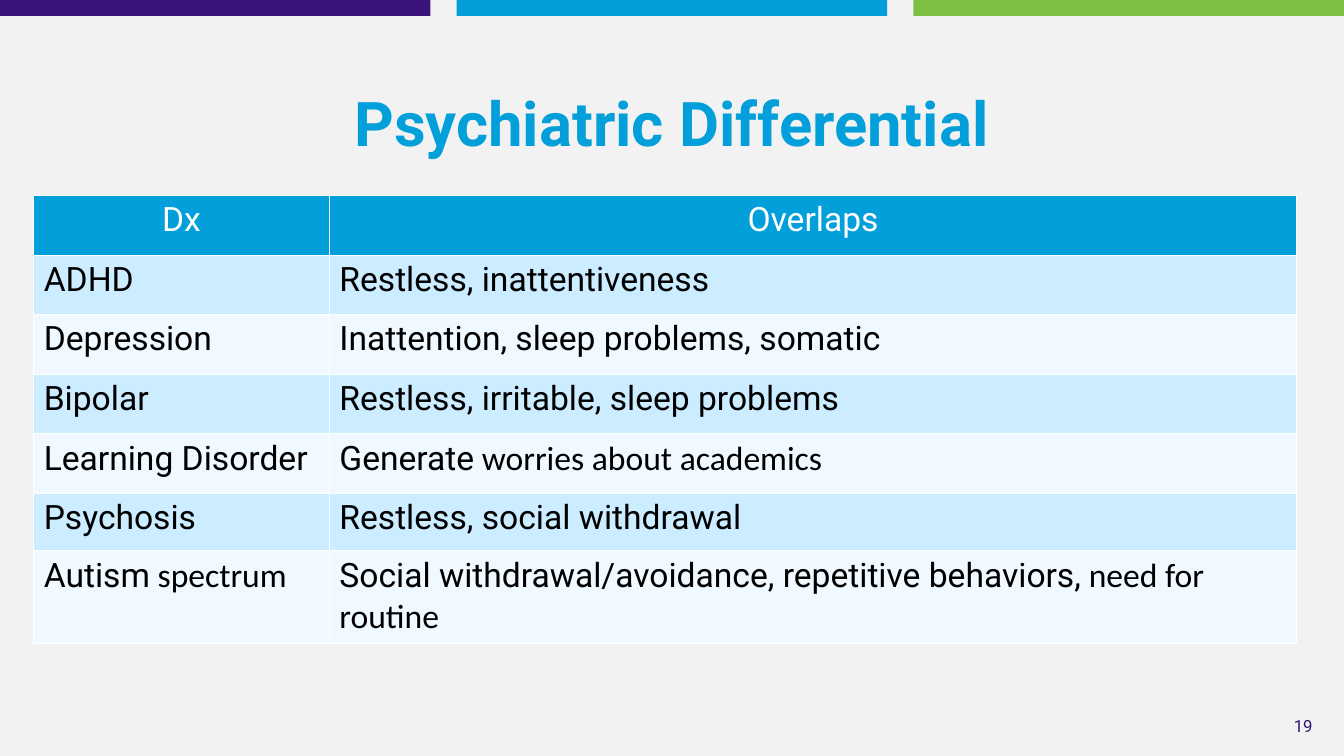
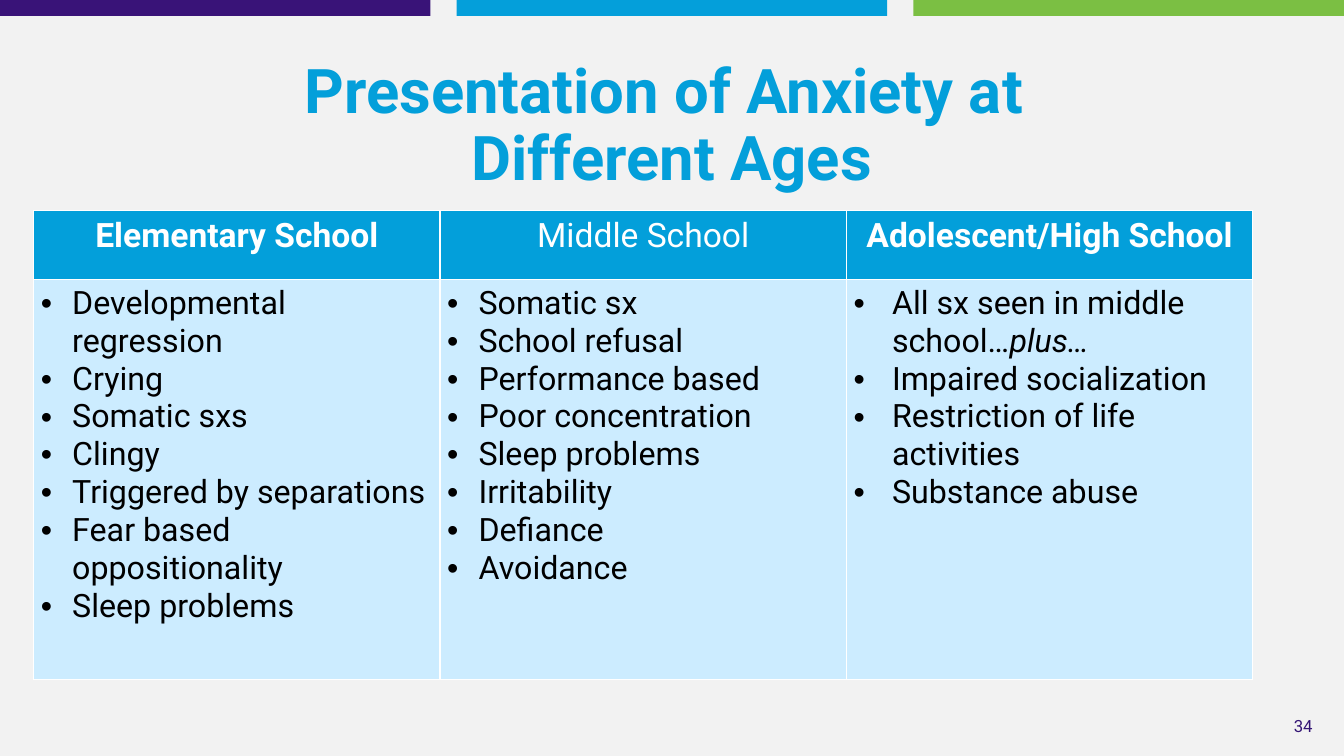
from pptx import Presentation
from pptx import util as u
from pptx.dml.color import RGBColor
from pptx.enum import shapes, text
from pptx.oxml.ns import qn
from lxml import etree

WIDE, HIGH = 33.87, 19.05
FONT, PLAIN = "Roboto", "Calibri"
BLUE, NAVY = "039FDA", "341575"
PAPER, WHITE, BLACK = "F2F2F2", "FFFFFF", "000000"
TINTS = ["CCECFF", "EFF9FF"]
BANDS = ["391378", "049FDA", "7BBF43"]
BAND, STEP = 10.85, 11.51
LEFT, CENTER, RIGHT = text.PP_ALIGN.LEFT, text.PP_ALIGN.CENTER, text.PP_ALIGN.RIGHT

DIFFS = [
    ["ADHD", "Restless, inattentiveness"],
    ["Depression", "Inattention, sleep problems, somatic"],
    ["Bipolar", "Restless, irritable, sleep problems"],
    ["Learning Disorder",
     ["Generate", (" worries about academics", {"name": PLAIN})]],
    ["Psychosis", "Restless, social withdrawal"],
    [["Autism", (" spectrum", {"name": PLAIN})],
     ["Social withdrawal/avoidance, repetitive behaviors,",
      (" need for routine", {"name": PLAIN})]],
]

# Each age group: heading, bold heading, bullet indent, points
AGES = [
    ("Elementary School", True, 0.79,
     ["Developmental regression", "Crying", "Somatic sxs", "Clingy",
      "Triggered by separations", "Fear based oppositionality",
      "Sleep problems"]),
    ("Middle School", False, 0.79,
     ["Somatic sx", "School refusal", "Performance based",
      "Poor concentration", "Sleep problems", "Irritability", "Defiance",
      "Avoidance"]),
    ("Adolescent/High School", True, 0.97,
     [["All sx seen in middle school…", ("plus…", {"italic": True})],
      "Impaired socialization", "Restriction of life activities",
      "Substance abuse"]),
]


def color(code):
    return RGBColor.from_string(code)


def paint(thing, code):
    thing.fill.solid()
    thing.fill.fore_color.rgb = color(code)


def write(par, runs, size, hue, align=LEFT, bold=False):
    """Add runs, each a string or a pair of string and font changes."""
    par.alignment = align
    for part in [runs] if isinstance(runs, str) else runs:
        words, change = (part, {}) if isinstance(part, str) else part
        run = par.add_run()
        run.text = words
        font = run.font
        font.size, font.color.rgb = u.Pt(size), color(hue)
        font.name, font.bold, font.italic = FONT, bold, False
        for key, value in change.items():
            setattr(font, key, value)


def bullet(par, indent):
    props = par._p.get_or_add_pPr()
    props.set("marL", str(u.Cm(indent)))
    props.set("indent", str(-u.Cm(indent)))
    etree.SubElement(props, qn("a:buFont"), typeface="Arial")
    etree.SubElement(props, qn("a:buChar"), char="•")


def border(cell):
    props = cell._tc.get_or_add_tcPr()
    for spot, side in enumerate(["lnL", "lnR", "lnT", "lnB"]):
        line = etree.Element(qn("a:" + side), w=str(u.Pt(1)))
        fill = etree.SubElement(line, qn("a:solidFill"))
        etree.SubElement(fill, qn("a:srgbClr"), val=WHITE)
        props.insert(spot, line)


def box(slide, x, y, w, h):
    frame = slide.shapes.add_textbox(u.Cm(x), u.Cm(y), u.Cm(w), u.Cm(h)).text_frame
    frame.word_wrap = True
    frame.vertical_anchor = text.MSO_ANCHOR.MIDDLE
    return frame.paragraphs[0]


def page(deck, lines, number):
    """Add a slide with the shared bands, title and page number."""
    slide = deck.slides.add_slide(deck.slide_layouts[6])
    paint(slide.background, PAPER)
    for col, code in enumerate(BANDS):
        band = slide.shapes.add_shape(
            shapes.MSO_SHAPE.RECTANGLE, u.Cm(col * STEP), 0, u.Cm(BAND), u.Cm(0.4))
        paint(band, code)
        band.line.fill.background()
        band.shadow.inherit = False
    title = box(slide, 2.33, 2.21, 29.21, 1.98)
    title.line_spacing = 0.9
    for row, line in enumerate(lines):
        if row:
            title.add_line_break()
        write(title, line, 44, BLUE, CENTER, True)
    write(box(slide, 31.55, 17.78, 1.78, 1.02), str(number), 12, NAVY, RIGHT)
    return slide


def grid(slide, top, cols, rows):
    """Add a table with a blue head row and tinted rows below."""
    table = slide.shapes.add_table(
        len(rows), len(cols), u.Cm(0.85), u.Cm(top),
        u.Cm(sum(cols)), u.Cm(sum(rows))).table
    table.horz_banding = False
    for col, width in zip(table.columns, cols):
        col.width = u.Cm(width)
    for num, high in enumerate(rows):
        table.rows[num].height = u.Cm(high)
        for cell in table.rows[num].cells:
            paint(cell, TINTS[(num - 1) % 2] if num else BLUE)
            border(cell)
    return table


def first(cell):
    return cell.text_frame.paragraphs[0]


def differ(deck):
    slide = page(deck, ["Psychiatric Differential"], 19)
    table = grid(slide, 4.93, [7.45, 24.38], [1.5] * 5 + [1.45, 2.33])
    for col, head in enumerate(["Dx", "Overlaps"]):
        write(first(table.cell(0, col)), head, 24, WHITE, CENTER)
    for row, cells in enumerate(DIFFS, 1):
        for col, runs in enumerate(cells):
            write(first(table.cell(row, col)), runs, 24, BLACK)


def ages(deck):
    # The space ending the first line sets its centring
    slide = page(deck, ["Presentation of Anxiety at ", "Different Ages"], 34)
    table = grid(slide, 5.31, [10.24] * 3, [1.73, 10.08])
    for cell in table.iter_cells():
        cell.margin_left = cell.margin_right = u.Cm(0.18)
        cell.margin_top = cell.margin_bottom = u.Cm(0.13)
    for col, (head, bold, indent, points) in enumerate(AGES):
        write(first(table.cell(0, col)), head, 24, WHITE, CENTER, bold)
        frame = table.cell(1, col).text_frame
        for num, runs in enumerate(points):
            par = frame.add_paragraph() if num else frame.paragraphs[0]
            bullet(par, indent)
            write(par, runs, 23, BLACK)


def main():
    deck = Presentation()
    deck.slide_width, deck.slide_height = u.Cm(WIDE), u.Cm(HIGH)
    differ(deck)
    ages(deck)
    deck.save("out.pptx")


if __name__ == "__main__":
    main()
